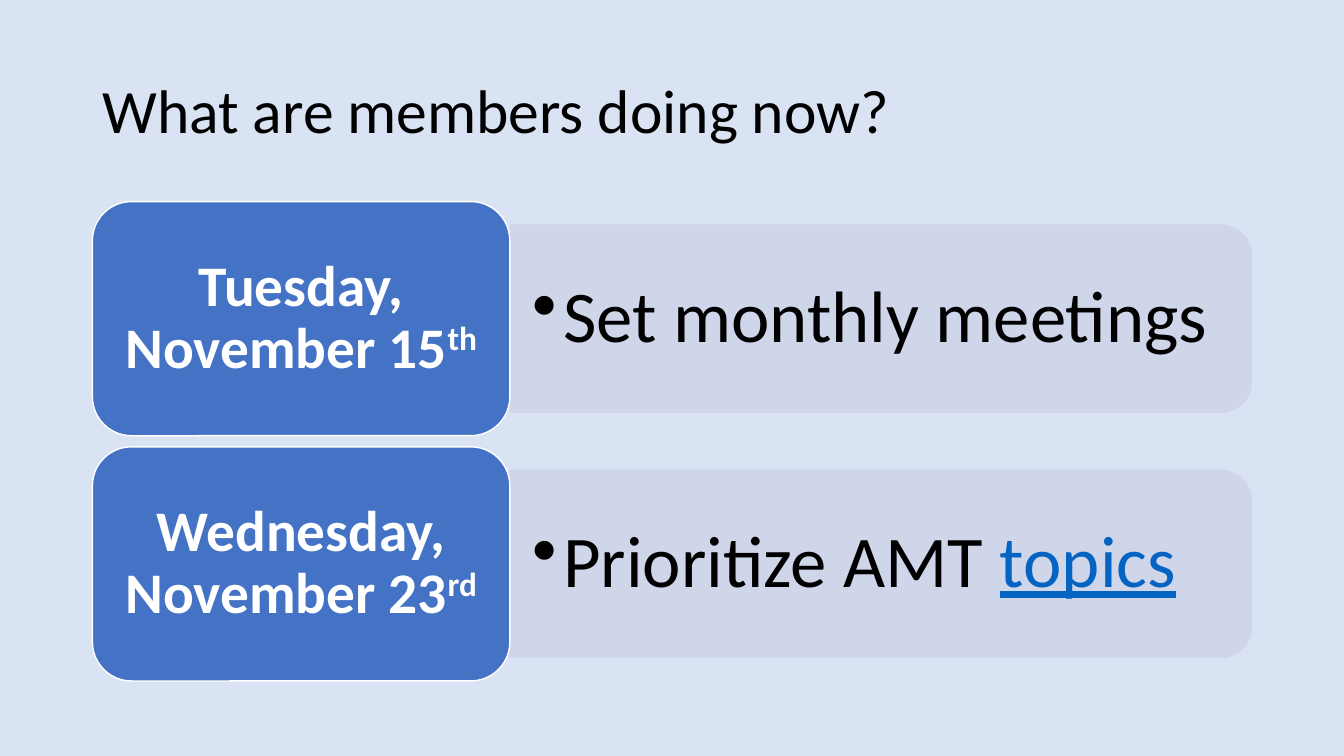
from lxml import etree
from pptx import Presentation
from pptx.dml.color import RGBColor
from pptx.enum.shapes import MSO_SHAPE
from pptx.enum.text import MSO_ANCHOR, PP_ALIGN
from pptx.oxml.ns import qn
from pptx.util import Cm, Pt

ROUNDED = MSO_SHAPE.ROUNDED_RECTANGLE
TAB = MSO_SHAPE.ROUND_2_SAME_RECTANGLE
MIDDLE = MSO_ANCHOR.MIDDLE
LEFT, CENTER = PP_ALIGN.LEFT, PP_ALIGN.CENTER
TITLE_ONLY = 5

COLORS = {
    "background": "DAE3F3",
    "bar": "CFD5EA",
    "card": "4472C4",
    "white": "FFFFFF",
    "black": "000000",
    "link": "0563C1",
}

TITLE_FONT = {"name": "Calibri", "size": Pt(44)}
DATE_FONT = {"name": "Calibri", "size": Pt(41), "bold": True}
TASK_FONT = {"name": "Calibri", "size": Pt(52)}

# Date, ordinal suffix, task, underlined ending of the task
ROWS = [
    ("Tuesday, November 15", "th", "Set monthly meetings", ""),
    ("Wednesday, November 23", "rd", "Prioritize AMT ", "topics"),
]
ROW_PITCH = 6.18
CARD_TOP, CARD_HEIGHT = 5.08, 5.9


def color(name):
    return RGBColor.from_string(COLORS[name])


def set_values(target, values):
    for name, value in values.items():
        setattr(target, name, value)


def format_frame(frame, side=0.25, edge=0.13):
    set_values(frame, {
        "word_wrap": True, "vertical_anchor": MIDDLE,
        "margin_left": Cm(side), "margin_right": Cm(side),
        "margin_top": Cm(edge), "margin_bottom": Cm(edge),
    })
    para = frame.paragraphs[0]
    para.line_spacing = 0.9
    return para


def add_span(para, text, font, ink):
    span = para.add_run()
    span.text = text
    set_values(span.font, font)
    span.font.color.rgb = color(ink)
    return span


def add_block(page, kind, place, fill, line):
    block = page.shapes.add_shape(kind, *map(Cm, place))
    block.shadow.inherit = False
    block.fill.solid()
    block.fill.fore_color.rgb = color(fill)
    block.line.color.rgb = color(line)
    block.line.width = Pt(1)
    return block


def add_title(page, text):
    title = page.shapes.title
    set_values(title, {"left": Cm(2.33), "top": Cm(1.01),
                       "width": Cm(29.21), "height": Cm(3.68)})
    para = format_frame(title.text_frame)
    para.alignment = LEFT
    add_span(para, text, TITLE_FONT, "black")


def add_bar(page, middle):
    # An upright tab turned on its side, rounded at the right
    width, height = 4.72, 18.69
    place = (22.2 - width / 2, middle - height / 2, width, height)
    bar = add_block(page, TAB, place, "bar", "bar")
    bar.rotation = 90
    for tint in bar._element.spPr.iter(qn("a:srgbClr")):
        etree.SubElement(tint, qn("a:alpha"), val="90000")


def add_task(page, middle, text, ending):
    height = 4.26
    box = page.shapes.add_textbox(Cm(12.85), Cm(middle - height / 2),
                                  Cm(18.47), Cm(height))
    para = format_frame(box.text_frame, 0.56, 0.28)
    add_span(para, text, TASK_FONT, "black")
    if ending:
        add_span(para, ending, {**TASK_FONT, "underline": True}, "link")
    # Hanging bullet
    layout = para._p.get_or_add_pPr()
    layout.set("marL", str(Cm(0.79)))
    layout.set("indent", str(Cm(-0.79)))
    etree.SubElement(layout, qn("a:buChar"), char="•")


def add_date_card(page, top, date, suffix):
    card = add_block(page, ROUNDED, (2.33, top, 10.52, CARD_HEIGHT),
                     "card", "white")
    para = format_frame(card.text_frame, 0.43, 0.23)
    para.alignment = CENTER
    add_span(para, date, DATE_FONT, "white")
    ordinal = add_span(para, suffix, DATE_FONT, "white")
    ordinal._r.get_or_add_rPr().set("baseline", "30000")


def main():
    deck = Presentation()
    deck.slide_width, deck.slide_height = Cm(33.87), Cm(19.05)
    page = deck.slides.add_slide(deck.slide_layouts[TITLE_ONLY])
    page.background.fill.solid()
    page.background.fill.fore_color.rgb = color("background")

    add_title(page, "What are members doing now?")

    # One row for each date
    for index, (date, suffix, task, ending) in enumerate(ROWS):
        top = CARD_TOP + index * ROW_PITCH
        middle = top + CARD_HEIGHT / 2
        add_bar(page, middle)
        add_task(page, middle, task, ending)
        add_date_card(page, top, date, suffix)

    deck.save("out.pptx")


if __name__ == "__main__":
    main()
